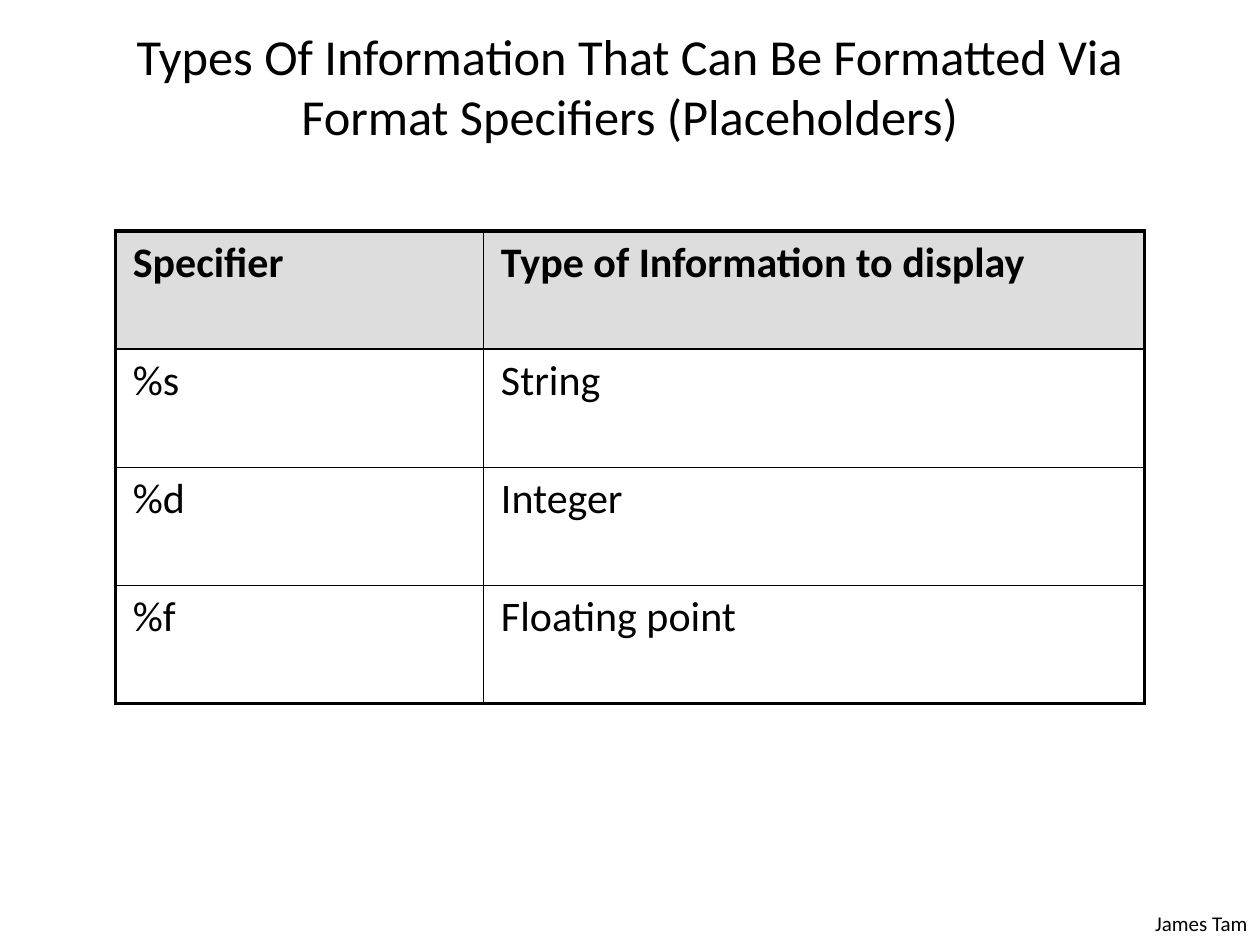
import pptx
import pptx.dml.color
import pptx.enum.text
import pptx.oxml
import pptx.oxml.ns
import pptx.util

Cm = pptx.util.Cm
Pt = pptx.util.Pt
ALIGN = pptx.enum.text.PP_ALIGN
COLORS = {"text": "000000", "border": "000000", "header": "DDDDDD"}
ROWS = [
    ("Specifier", "Type of Information to display"),
    ("%s", "String"),
    ("%d", "Integer"),
    ("%f", "Floating point"),
]


def rgb(name):
    return pptx.dml.color.RGBColor.from_string(COLORS[name])


def write(tf, text, size=24, bold=False, align=ALIGN.LEFT, font="Calibri"):
    p = tf.paragraphs[0]
    p.alignment = align
    r = p.add_run()
    r.text = text
    r.font.name, r.font.size, r.font.bold = font, Pt(size), bold
    r.font.color.rgb = rgb("text")


class SlideBuilder:
    """Holds the style and the current slide, and adds each kind of element."""

    outer, inner = 2.25, 1

    def __init__(self, prs):
        self.s = prs.slides.add_slide(prs.slide_layouts[5])

    def title(self, text, left, top, width, height):
        sp = self.s.shapes.title
        sp.left, sp.top, sp.width, sp.height = map(Cm, (left, top, width, height))
        tf = sp.text_frame
        tf.word_wrap = True
        tf.auto_size = pptx.enum.text.MSO_AUTO_SIZE.NONE
        tf.vertical_anchor = pptx.enum.text.MSO_ANCHOR.MIDDLE
        write(tf, text, size=28.8, align=ALIGN.CENTER)

    def label(self, text, left, top, width, height):
        sp = self.s.shapes.add_textbox(*map(Cm, (left, top, width, height)))
        sp.text_frame.word_wrap = True
        write(sp.text_frame, text, size=12, align=ALIGN.RIGHT)

    def border(self, cell, side, width):
        ln = pptx.oxml.parse_xml(
            f'<a:ln{side} {pptx.oxml.ns.nsdecls("a")} w="{Pt(width)}"><a:solidFill>'
            f'<a:srgbClr val="{COLORS["border"]}"/></a:solidFill></a:ln{side}>'
        )
        cell._tc.get_or_add_tcPr().append(ln)

    def table(self, rows, left, top, widths, row_height):
        n_rows, n_cols = len(rows), len(widths)
        frame = self.s.shapes.add_table(
            n_rows, n_cols, Cm(left), Cm(top), Cm(sum(widths)), Cm(row_height * n_rows)
        )
        table = frame.table
        table.first_row = table.horz_banding = False
        for column, width in zip(table.columns, widths):
            column.width = Cm(width)
        for i, texts in enumerate(rows):
            table.rows[i].height = Cm(row_height)
            for j, text in enumerate(texts):
                cell = table.cell(i, j)
                cell.margin_left = cell.margin_right = Cm(0.35)
                cell.margin_top = cell.margin_bottom = Cm(0.13)
                edges = {"L": j == 0, "R": j == n_cols - 1,
                         "T": i == 0, "B": i == n_rows - 1}
                for side, is_outer in edges.items():
                    self.border(cell, side, self.outer if is_outer else self.inner)
                if i == 0:
                    cell.fill.solid()
                    cell.fill.fore_color.rgb = rgb("header")
                else:
                    cell.fill.background()
                write(cell.text_frame, text, bold=i == 0)


def main():
    prs = pptx.Presentation()
    prs.slide_width, prs.slide_height = Cm(25.4), Cm(19.05)
    builder = SlideBuilder(prs)
    builder.label("James Tam", 22.02, 18.24, 3.38, 0.76)
    builder.title(
        "Types Of Information That Can Be Formatted Via Format Specifiers (Placeholders)",
        1.27, 0.71, 22.86, 2.03,
    )
    builder.table(ROWS, left=2.33, top=4.66, widths=(7.42, 13.32), row_height=2.38)
    prs.save("out.pptx")


if __name__ == "__main__":
    main()
